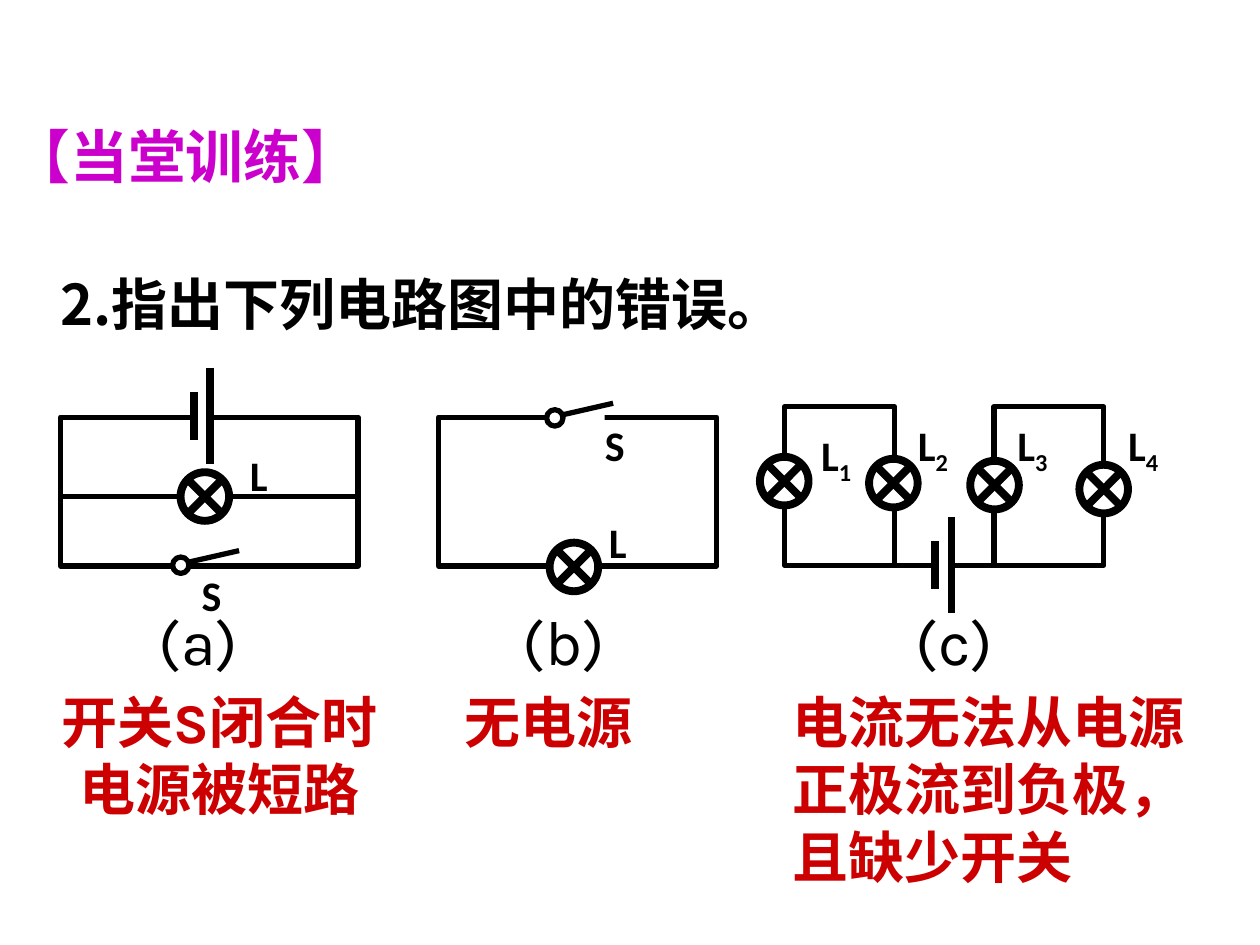
from lxml import etree
from pptx import Presentation
from pptx.dml.color import RGBColor
from pptx.enum.shapes import MSO_CONNECTOR, MSO_SHAPE
from pptx.enum.text import MSO_ANCHOR, MSO_AUTO_SIZE, PP_ALIGN
from pptx.oxml.ns import qn
from pptx.util import Cm, Pt

RECTANGLE, OVAL = MSO_SHAPE.RECTANGLE, MSO_SHAPE.OVAL
STRAIGHT = MSO_CONNECTOR.STRAIGHT
LEFT, CENTER = PP_ALIGN.LEFT, PP_ALIGN.CENTER
TOP = MSO_ANCHOR.TOP
NO_AUTOFIT = MSO_AUTO_SIZE.NONE

BLACK = RGBColor(0x00, 0x00, 0x00)
WHITE = RGBColor(0xFF, 0xFF, 0xFF)
RED = RGBColor(0xCC, 0x00, 0x00)
MAGENTA = RGBColor(0xCC, 0x00, 0xCC)

CHINESE_FONT = "Noto Sans CJK SC"
CAPTION_FONT = "Karla"
LABEL_FONT = "Calibri"

WIRE, BOLD_WIRE = 3, 4.5  # line widths in points


def write_text(shape, text, size=32, font=CHINESE_FONT, color=BLACK, bold=True,
               align=LEFT, wrap=True, subscript=""):
    """Fill a shape with one paragraph, with an optional subscript at its end."""
    frame = shape.text_frame
    frame.word_wrap = wrap
    frame.auto_size = NO_AUTOFIT
    frame.vertical_anchor = TOP
    paragraph = frame.paragraphs[0]
    paragraph.alignment = align
    for content in filter(None, (text, subscript)):
        run = paragraph.add_run()
        run.text = content
        run.font.size = Pt(size)
        run.font.name = font
        run.font.bold = bold
        run.font.color.rgb = color
        properties = run.font._element
        east_asian = etree.Element(qn("a:ea"), typeface=CHINESE_FONT)
        properties.find(qn("a:latin")).addnext(east_asian)
    if subscript:
        properties.set("baseline", "-25000")


def add_text(slide, text, left, top, width, height, **text_format):
    box = slide.shapes.add_textbox(Cm(left), Cm(top), Cm(width), Cm(height))
    write_text(box, text, **text_format)


def add_label(slide, text, left, top, width=1.75, **text_format):
    add_text(slide, text, left, top, width, 1.27, size=24, font=LABEL_FONT,
             align=CENTER, **text_format)


def add_figure(slide, kind, left, top, width, height, fill=WHITE, weight=None):
    shape = slide.shapes.add_shape(kind, Cm(left), Cm(top), Cm(width), Cm(height))
    shape.shadow.inherit = False
    if fill is None:
        shape.fill.background()
    else:
        shape.fill.solid()
        shape.fill.fore_color.rgb = fill
    if weight is None:
        shape.line.fill.background()
    else:
        shape.line.color.rgb = BLACK
        shape.line.width = Pt(weight)


def add_line(slide, x1, y1, x2, y2, weight=WIRE):
    line = slide.shapes.add_connector(STRAIGHT, Cm(x1), Cm(y1), Cm(x2), Cm(y2))
    line.line.color.rgb = BLACK
    line.line.width = Pt(weight)
    etree.SubElement(line._element.spPr, qn("a:effectLst"))


def add_loop(slide, left, top, width, height):
    add_figure(slide, RECTANGLE, left, top, width, height, fill=None, weight=WIRE)


def add_lamp(slide, x, y):
    """Circle with a cross, centred on x, y."""
    radius, arm = 0.49, 0.33
    add_figure(slide, OVAL, x - radius, y - radius, 2 * radius, 2 * radius,
               weight=BOLD_WIRE)
    for rise in (arm, -arm):
        add_line(slide, x - arm, y - rise, x + arm, y + rise, BOLD_WIRE)


def add_switch(slide, left, top):
    """Pivot circle with a raised arm."""
    pivot = 0.33
    add_figure(slide, OVAL, left, top, pivot, pivot, weight=WIRE)
    add_line(slide, left + pivot, top + 0.1, left + 1.34, top - 0.13)


def add_battery(slide, x, y):
    """Short plate at x and long plate to its right, with the wire cut between."""
    gap, short, long = 0.33, 0.48, 0.97
    add_figure(slide, RECTANGLE, x, y - long, gap, 2 * long)
    for plate, half in ((x, short), (x + gap, long)):
        add_line(slide, plate, y - half, plate, y + half, BOLD_WIRE)


def draw_circuit_a(slide):
    add_loop(slide, 1.22, 8.41, 6, 3)
    add_line(slide, 1.22, 10.01, 7.22, 10.01)
    add_switch(slide, 3.48, 11.23)
    add_lamp(slide, 4.13, 10.01)
    add_battery(slide, 3.91, 8.38)
    add_label(slide, "L", 4.34, 8.94)
    add_label(slide, "S", 3.73, 11.35, width=1.07, wrap=False)


def draw_circuit_b(slide):
    add_loop(slide, 8.84, 8.41, 5.61, 3)
    add_figure(slide, RECTANGLE, 11.02, 8.28, 1.17, 0.33)  # open gap in the wire
    add_switch(slide, 11.02, 8.26)
    add_lamp(slide, 11.57, 11.43)
    add_label(slide, "L", 11.58, 10.29)
    add_label(slide, "S", 11.86, 8.33, width=1.07, wrap=False)


def draw_circuit_c(slide):
    for left in (15.82, 20.04):
        add_loop(slide, left, 8.2, 2.21, 3.2)
    add_line(slide, 18.03, 11.4, 20.24, 11.4)
    lamps = (
        (15.81, 9.7, 15.98, 8.53),
        (18.01, 9.74, 17.93, 8.33),
        (20.05, 9.78, 19.94, 8.33),
        (22.25, 9.86, 22.17, 8.33),
    )
    for number, (x, y, label_left, label_top) in enumerate(lamps, start=1):
        add_lamp(slide, x, y)
        add_label(slide, "L", label_left, label_top, subscript=str(number))
    add_battery(slide, 18.85, 11.39)


def main():
    presentation = Presentation()
    presentation.slide_width, presentation.slide_height = Cm(25.4), Cm(19.05)
    slide = presentation.slides.add_slide(presentation.slide_layouts[5])

    # Heading and question
    title = slide.shapes.title
    title.left, title.top, title.width, title.height = (
        Cm(0), Cm(2.31), Cm(10.36), Cm(1.65))
    write_text(title, "【当堂训练】", size=33, color=MAGENTA)
    add_text(slide, "2.指出下列电路图中的错误。", 0.97, 5.31, 15.88, 1.63)

    # Circuit diagrams
    draw_circuit_a(slide)
    draw_circuit_b(slide)
    draw_circuit_c(slide)

    # Captions
    for text, left in (("(a)", 2.92), ("(b)", 10.29), ("(c)", 18.16)):
        add_text(slide, text, left, 12.02, 2.16, 1.78, size=36, font=CAPTION_FONT,
                 bold=False, align=CENTER, wrap=False)

    # Answers
    answers = (
        ("开关S闭合时电源被短路", 0.53, 7.8, 2.97, CENTER),
        ("无电源", 9.12, 5, 1.63, LEFT),
        ("电流无法从电源正极流到负极，且缺少开关", 15.72, 9.09, 4.37, LEFT),
    )
    for text, left, width, height, align in answers:
        add_text(slide, text, left, 13.74, width, height, font=CAPTION_FONT,
                 color=RED, align=align)

    presentation.save("out.pptx")


if __name__ == "__main__":
    main()
